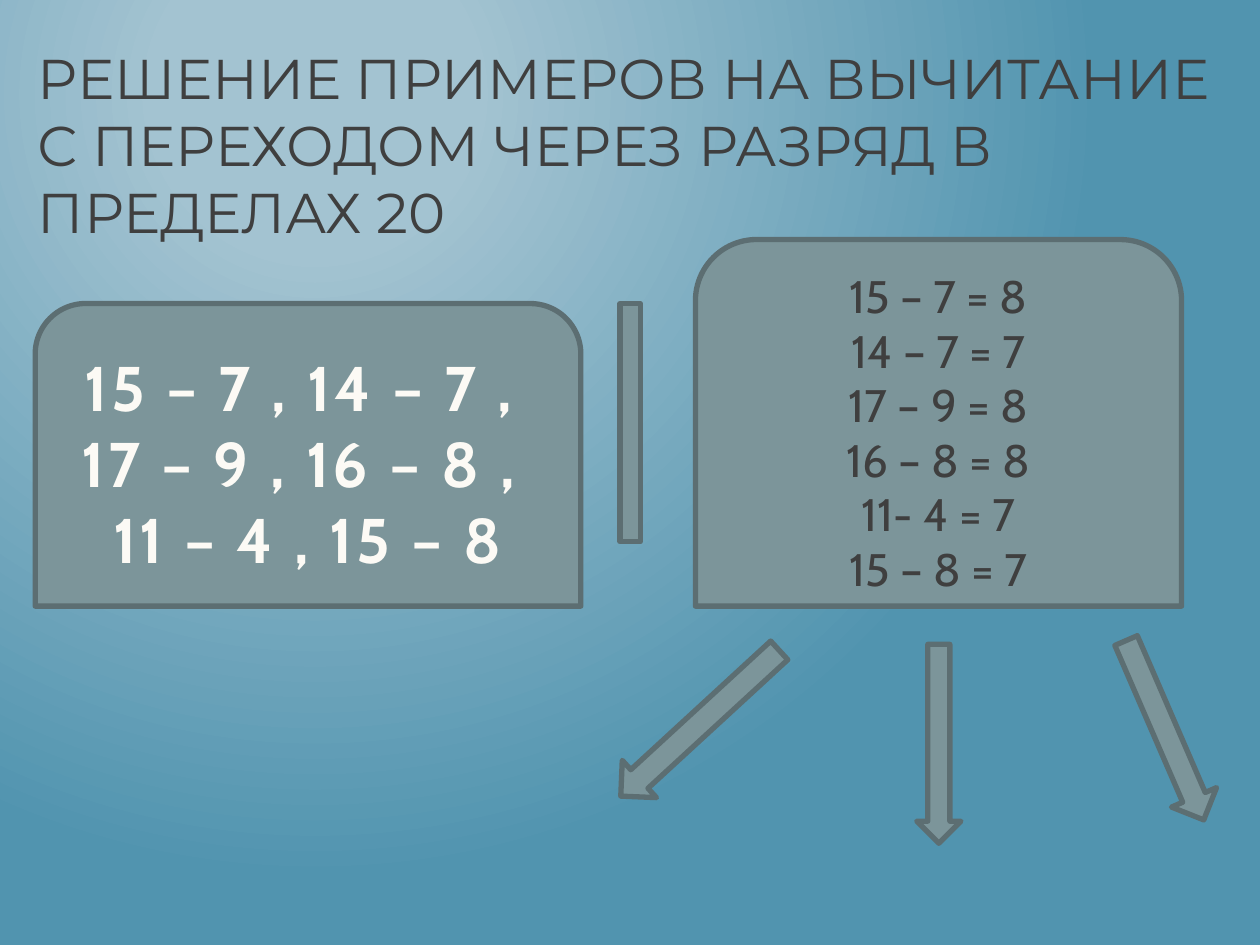
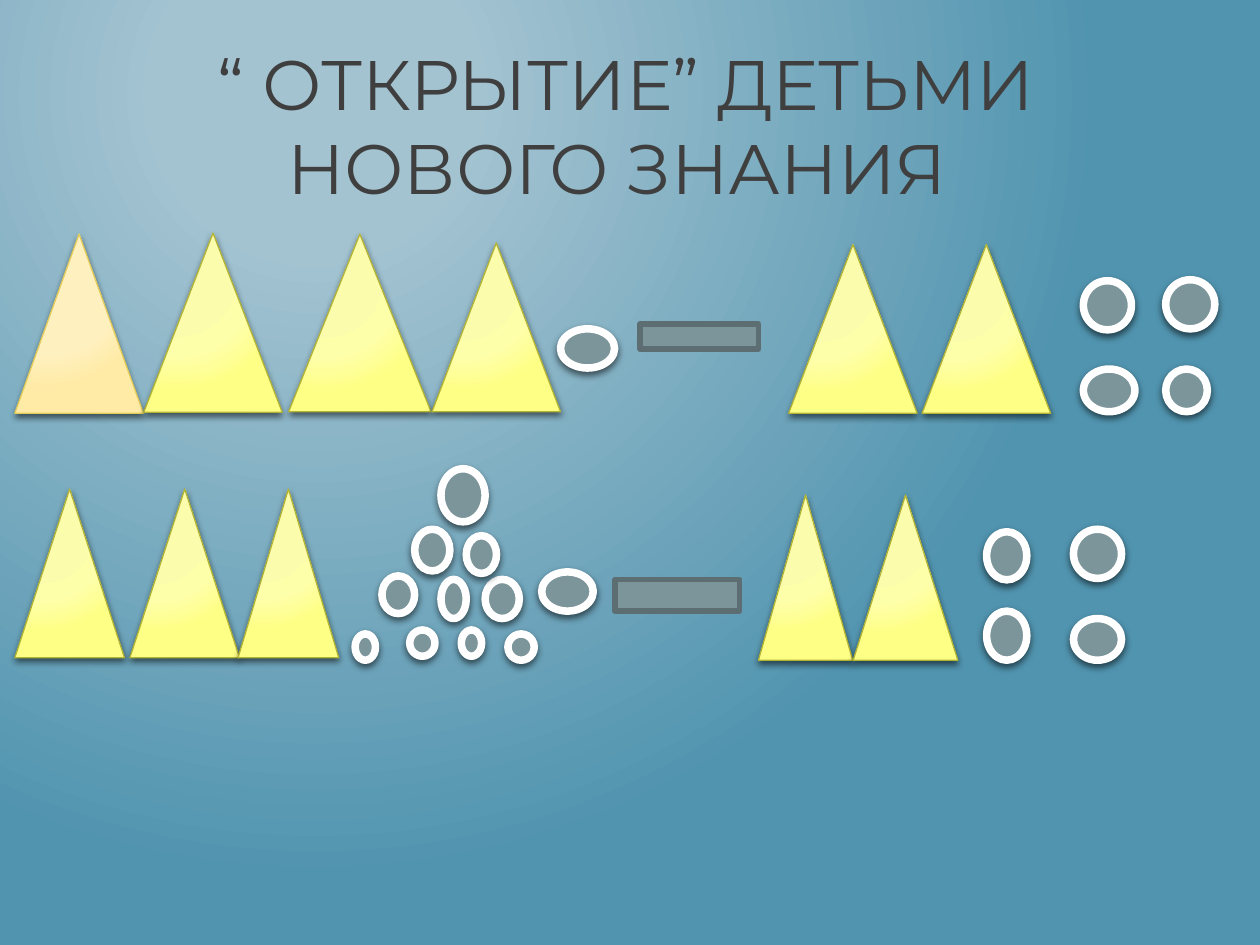
from lxml.etree import SubElement
from pptx import Presentation
from pptx.dml.color import RGBColor
from pptx.enum.shapes import MSO_SHAPE as Shape
from pptx.enum.text import MSO_ANCHOR as Anchor, MSO_AUTO_SIZE as AutoSize, PP_ALIGN as Align
from pptx.oxml.ns import qn
from pptx.util import Cm, Pt

COLORS = {
    "text": "3F3F3F",
    "glow": "FCFAF5",
    "slate": "7C959A",
    "slate_edge": "5C6E72",
    "white": "FFFFFF",
    "yellow_edge": "B3B435",
    "peach_edge": "E3CC5A",
    "shadow": "000000",
}
BACKDROP = [(20, "A3C3D1"), (100, "5194AF")]
YELLOW = [(0, "FBFCAC"), (35, "FBFCAC"), (69, "FEFFA9"), (100, "FEFF85")]
PEACH = [(0, "FFF0BF"), (35, "FFF0BF"), (69, "FFF0BF"), (100, "FFEBA5")]
TITLE_FONT, BODY_FONT = "Montserrat", "Cabin"


def rgb(name):
    return RGBColor.from_string(COLORS[name])


# XML helpers
def add_node(parent, tag, **attributes):
    return SubElement(parent, qn(tag), {key: str(value) for key, value in attributes.items()})


def add_color(parent, value, alpha=None):
    color = add_node(parent, "a:srgbClr", val=value)
    if alpha is not None:
        add_node(color, "a:alpha", val=alpha * 1000)


def paint_radial(owner, fill, stops, left, top):
    """Fill with a circular gradient whose focus is given in percent."""
    fill.gradient()
    gradient = owner.element.find(".//" + qn("a:gradFill"))
    for child in list(gradient):
        gradient.remove(child)
    stop_list = add_node(gradient, "a:gsLst")
    for position, value in stops:
        add_color(add_node(stop_list, "a:gs", pos=position * 1000), value)
    circle = add_node(gradient, "a:path", path="circle")
    add_node(circle, "a:fillToRect", l=left * 1000, t=top * 1000, r=100000, b=100000)


def drop_shadow(shape):
    effects = shape.element.spPr.find(qn("a:effectLst"))
    shadow = add_node(effects, "a:outerShdw", blurRad=Pt(4), dist=Pt(2), dir=90 * 60000,
                      algn="ctr", rotWithShape=0)
    add_color(shadow, COLORS["shadow"], alpha=55)


# Elements
def place(box, left, top, width, height):
    box.left, box.top, box.width, box.height = map(Cm, (left, top, width, height))


def format_text(frame, font, size, align):
    for para in frame.paragraphs:
        para.alignment = align
        for span in para.runs:
            span.font.name, span.font.size = font, Pt(size)
            span.font.color.rgb = rgb("text")


def add_page(deck, title, bounds, size, align):
    page = deck.slides.add_slide(deck.slide_layouts[5])
    box = page.shapes.title
    place(box, *bounds)
    frame = box.text_frame
    frame.text = title
    frame.word_wrap, frame.auto_size = True, AutoSize.NONE
    frame.vertical_anchor = Anchor.TOP
    format_text(frame, TITLE_FONT, size, align)
    return page


def add_figure(page, kind, bounds, edge="slate_edge", weight=3.03, stops=None, rotation=0):
    figure = page.shapes.add_shape(kind, *map(Cm, bounds))
    figure.rotation = rotation
    if stops:
        paint_radial(figure, figure.fill, stops, 50, 50)
    else:
        figure.fill.solid()
        figure.fill.fore_color.rgb = rgb("slate")
    figure.line.color.rgb, figure.line.width = rgb(edge), Pt(weight)
    figure.shadow.inherit = False
    return figure


def add_card(page, bounds, lines, size):
    card = add_figure(page, Shape.ROUND_2_SAME_RECTANGLE, bounds)
    frame = card.text_frame
    frame.text = "\n".join(lines)
    frame.vertical_anchor = Anchor.MIDDLE
    format_text(frame, BODY_FONT, size, Align.CENTER)
    return card


def outline_text(card):
    """Bold, spaced letters with a pale outline and a half-clear fill."""
    for para in card.text_frame.paragraphs:
        for span in para.runs:
            span.font.bold = True
            props = span.font._element
            props.set("spc", "200")
            add_node(props.find(".//" + qn("a:srgbClr")), "a:alpha", val=50000)
            outline = add_node(props, "a:ln", w=Pt(2.3))
            add_color(add_node(outline, "a:solidFill"), COLORS["glow"])
            props.insert(0, outline)


def add_ten(page, bounds, edge="yellow_edge", stops=YELLOW):
    drop_shadow(add_figure(page, Shape.ISOSCELES_TRIANGLE, bounds, edge, 0.75, stops))


def add_unit(page, bounds):
    drop_shadow(add_figure(page, Shape.FLOWCHART_CONNECTOR, bounds, "white", 4.32))


# Slides
def build_examples(deck):
    page = add_page(
        deck, "РЕШЕНИЕ ПРИМЕРОВ НА ВЫЧИТАНИЕ С ПЕРЕХОДОМ ЧЕРЕЗ РАЗРЯД В ПРЕДЕЛАХ 20",
        (0.51, 0.74, 24.89, 5.59), 32, Align.LEFT)
    tasks = ["15 – 7 , 14 – 7 , ", "17 – 9 , 16 – 8 , ", "11 – 4 , 15 – 8"]
    outline_text(add_card(page, (0.71, 6.12, 11, 6.1), tasks, 36))
    add_figure(page, Shape.RECTANGLE, (12.5, 6.12, 0.41, 4.8))
    answers = ["15 – 7 = 8", "14 – 7 = 7", "17 – 9 = 8", "16 – 8 = 8", "11- 4 = 7", "15 – 8 = 7"]
    add_card(page, (14.02, 4.83, 9.8, 7.39), answers, 26)
    arrows = [
        (Shape.RIGHT_ARROW, (16.92, 14.55, 4.01, 0.89), 90),
        (Shape.DOWN_ARROW, (22.99, 12.75, 0.99, 3.94), 336.6),
        (Shape.RIGHT_ARROW, (11.94, 14.07, 4.34, 1.02), 137.4),
    ]
    for kind, bounds, rotation in arrows:
        add_figure(page, kind, bounds, rotation=rotation)


def build_discovery(deck):
    page = add_page(deck, "“ ОТКРЫТИЕ” ДЕТЬМИ НОВОГО ЗНАНИЯ ",
                    (1.32, 0.69, 22.61, 4.17), 40, Align.CENTER)

    # Triangles stand for tens
    add_ten(page, (0.3, 4.72, 2.59, 3.61), "peach_edge", PEACH)
    tens = [
        (2.9, 4.7, 2.79, 3.61), (5.82, 4.72, 2.87, 3.58), (8.71, 4.9, 2.59, 3.4),
        (15.9, 4.93, 2.59, 3.4), (18.59, 4.93, 2.59, 3.4),
        (0.3, 9.86, 2.21, 3.4), (2.62, 9.86, 2.21, 3.4), (4.8, 9.86, 2.03, 3.4),
        (15.29, 9.98, 1.9, 3.33), (17.2, 9.98, 2.11, 3.33),
    ]
    for bounds in tens:
        add_ten(page, bounds)

    # Circles stand for units
    upper_units = [
        (11.3, 6.63, 1.09, 0.79),
        (21.84, 5.66, 0.97, 0.99), (23.5, 5.64, 0.99, 0.99),
        (21.84, 7.44, 1.04, 0.86), (23.5, 7.44, 0.84, 0.86),
    ]
    pyramid = [
        (7.16, 12.78, 0.41, 0.53), (8.26, 12.7, 0.51, 0.53),
        (9.3, 12.7, 0.41, 0.53), (10.24, 12.78, 0.53, 0.53),
        (7.7, 11.61, 0.66, 0.76), (8.89, 11.68, 0.51, 0.79), (9.78, 11.68, 0.69, 0.79),
        (8.36, 10.67, 0.71, 0.84), (9.4, 10.8, 0.61, 0.76),
        (8.89, 9.45, 0.89, 1.07),
    ]
    lower_units = [
        (10.92, 11.53, 1.04, 0.79),
        (19.89, 10.72, 0.81, 0.97), (19.89, 12.32, 0.81, 0.99),
        (21.64, 10.67, 0.97, 0.99), (21.64, 12.47, 0.97, 0.84),
    ]
    for bounds in upper_units + pyramid + lower_units:
        add_unit(page, bounds)

    # Minus signs
    for bounds in [(12.9, 6.53, 2.39, 0.51), (12.4, 11.68, 2.51, 0.64)]:
        add_figure(page, Shape.RECTANGLE, bounds)


def main():
    deck = Presentation()
    deck.slide_width, deck.slide_height = Cm(25.4), Cm(19.05)
    master = deck.slide_master
    paint_radial(master, master.background.fill, BACKDROP, 50, 20)
    build_examples(deck)
    build_discovery(deck)
    deck.save("out.pptx")


if __name__ == "__main__":
    main()
